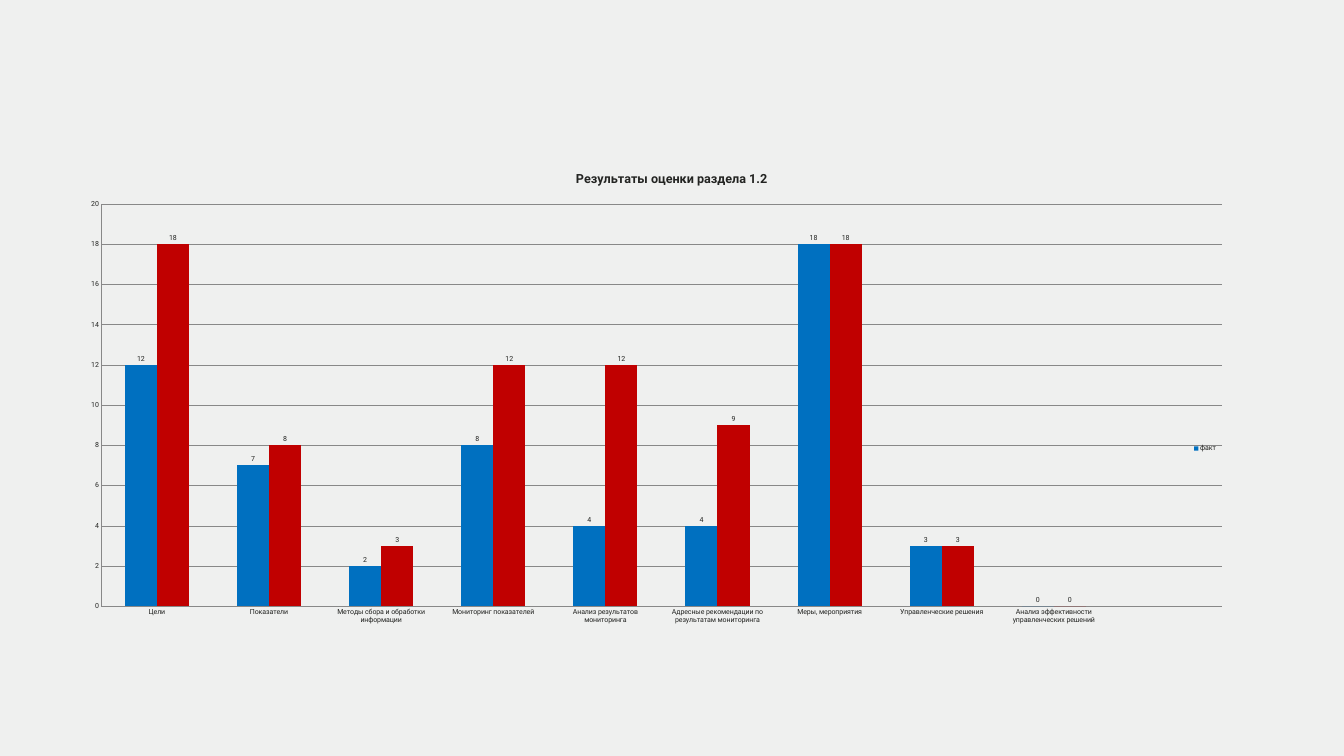
from typing import Any, NamedTuple

from pptx import Presentation
from pptx.chart.data import CategoryChartData as Data
from pptx.dml.color import RGBColor
from pptx.enum.chart import XL_CHART_TYPE as Kind
from pptx.enum.chart import XL_LABEL_POSITION as Spot
from pptx.enum.chart import XL_LEGEND_POSITION as Side
from pptx.enum.chart import XL_TICK_MARK as Tick
from pptx.oxml import parse_xml
from pptx.oxml.ns import nsdecls, qn
from pptx.util import Inches, Pt

PAPER = RGBColor(0xEF, 0xF0, 0xEF)
INK = RGBColor(0x23, 0x24, 0x22)
GRAY = RGBColor(0x88, 0x88, 0x88)
BLUE = RGBColor(0x00, 0x70, 0xC0)
RED = RGBColor(0xC0, 0x00, 0x00)
FONT = "Roboto"
TITLE = "Результаты оценки раздела 1.2"


class Row(NamedTuple):
    name: str
    fact: int | None
    goal: int | None


class Bar(NamedTuple):
    name: str
    field: str
    color: RGBColor


ROWS = [
    Row("Цели", 12, 18),
    Row("Показатели", 7, 8),
    Row("Методы сбора и обработки информации", 2, 3),
    Row("Мониторинг показателей", 8, 12),
    Row("Анализ результатов мониторинга", 4, 12),
    Row("Адресные рекомендации по результатам мониторинга", 4, 9),
    Row("Меры, мероприятия", 18, 18),
    Row("Управленческие решения", 3, 3),
    Row("Анализ эффективности управленческих решений", 0, 0),
    Row("", None, None),
]
BARS = [Bar("факт", "fact", BLUE), Bar("Series 2", "goal", RED)]

TICKS = {"major_tick_mark": Tick.NONE, "minor_tick_mark": Tick.NONE}
SCALE = {"minimum_scale": 0, "maximum_scale": 20, "major_unit": 2,
         "has_major_gridlines": True}
LABELS = {"show_value": True, "position": Spot.OUTSIDE_END}
LEGEND = {"position": Side.RIGHT, "include_in_layout": True}


def apply(item: Any, looks: dict[str, Any]) -> None:
    for key, value in looks.items():
        setattr(item, key, value)


def style(font: Any, size: float, bold: bool = False) -> None:
    apply(font, {"name": FONT, "size": Pt(size), "bold": bold})
    font.color.rgb = INK


def rule(line: Any) -> None:
    line.color.rgb = GRAY
    line.width = Pt(0.75)


def place(node: Any, at: int, spots: dict[str, float], inner: bool = False) -> None:
    for old in node.findall(qn("c:layout")):
        node.remove(old)
    parts = '<c:layoutTarget val="inner"/>' if inner else ""
    parts += '<c:xMode val="edge"/><c:yMode val="edge"/>'
    parts += "".join(f'<c:{key} val="{value}"/>' for key, value in spots.items())
    node.insert(at, parse_xml(
        f'<c:layout {nsdecls("c")}><c:manualLayout>{parts}</c:manualLayout></c:layout>'))


def draw_bars(chart: Any) -> None:
    plot = chart.plots[0]
    apply(plot, {"gap_width": 150, "overlap": 0, "vary_by_categories": False})
    for bar, series in zip(BARS, plot.series):
        series.format.fill.solid()
        series.format.fill.fore_color.rgb = bar.color
        apply(series.data_labels, LABELS)
        style(series.data_labels.font, 10)


def draw_axes(chart: Any) -> None:
    for axis in (chart.category_axis, chart.value_axis):
        apply(axis, TICKS)
        rule(axis.format.line)
        style(axis.tick_labels.font, 10)
    apply(chart.value_axis, SCALE)
    rule(chart.value_axis.major_gridlines.format.line)


def draw_title(chart: Any) -> None:
    chart.has_title = True
    frame = chart.chart_title.text_frame
    frame.text = TITLE
    style(frame.paragraphs[0].runs[0].font, 18, True)


def draw_legend(chart: Any) -> None:
    chart.has_legend = True
    apply(chart.legend, LEGEND)
    style(chart.legend.font, 10)
    node = chart.element.find(".//" + qn("c:legend"))
    node.insert(1, parse_xml(
        f'<c:legendEntry {nsdecls("c")}><c:idx val="1"/><c:delete val="1"/></c:legendEntry>'))
    place(node, 2, {"x": 0.93, "y": 0.6})


def draw_chart(slide: Any) -> None:
    data = Data()
    data.categories = [row.name for row in ROWS]
    for bar in BARS:
        data.add_series(bar.name, [getattr(row, bar.field) for row in ROWS])
    box = map(Inches, (1.33, 3.1, 24, 9.47))
    chart = slide.shapes.add_chart(Kind.COLUMN_CLUSTERED, *box, data).chart
    style(chart.font, 10)
    draw_title(chart)
    draw_bars(chart)
    draw_axes(chart)
    draw_legend(chart)
    area = chart.element.find(".//" + qn("c:plotArea"))
    place(area, 0, {"x": 0.028, "y": 0.1, "w": 0.927, "h": 0.843}, True)


def main() -> None:
    deck = Presentation()
    apply(deck, {"slide_width": Inches(26.67), "slide_height": Inches(15)})
    slide = deck.slides.add_slide(deck.slide_layouts[6])
    slide.background.fill.solid()
    slide.background.fill.fore_color.rgb = PAPER
    draw_chart(slide)
    deck.save("out.pptx")


if __name__ == "__main__":
    main()
